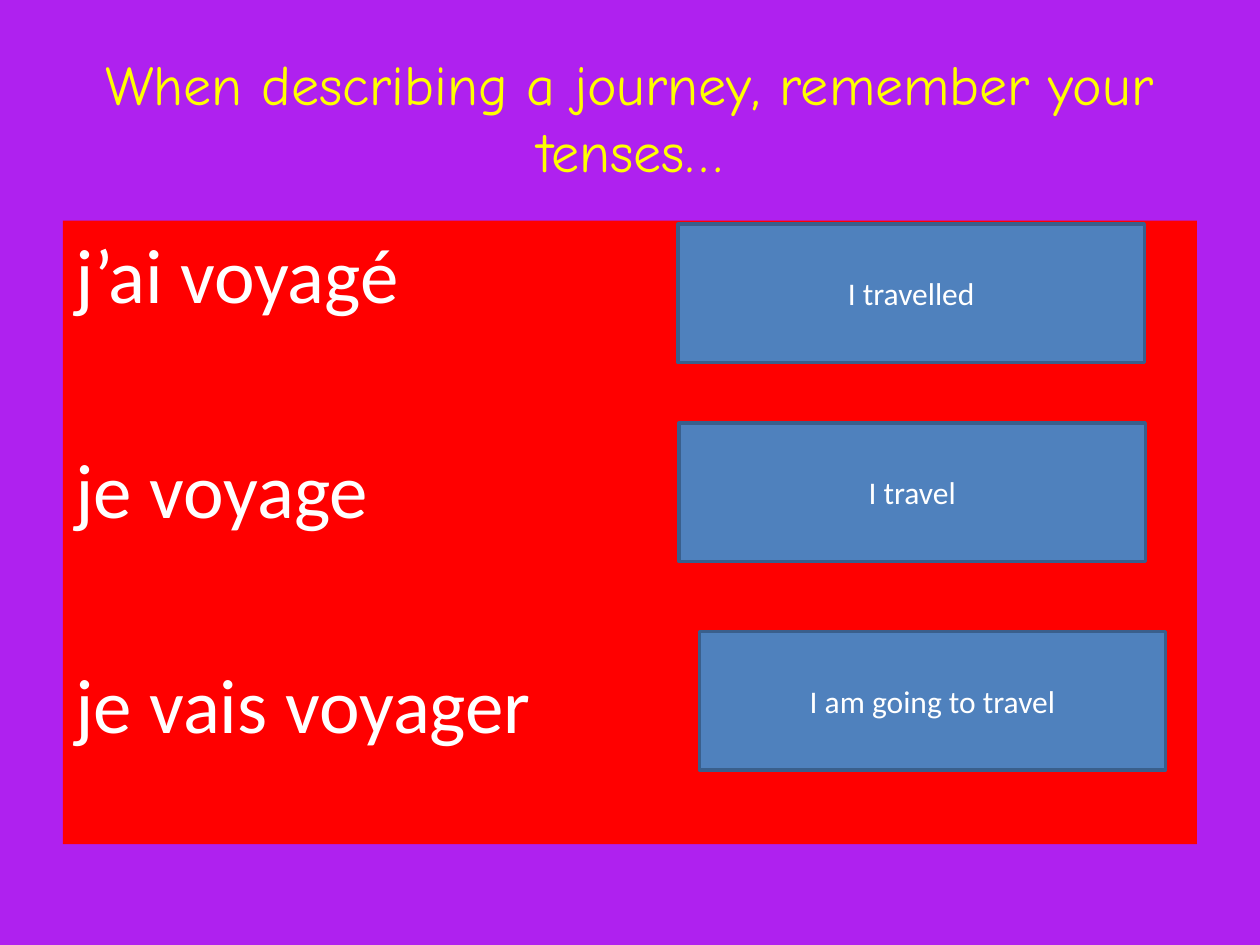
from pptx import Presentation
from pptx.dml.color import RGBColor
from pptx.enum import shapes, text
from pptx.util import Cm, Pt

PURPLE = RGBColor(0xAF, 0x21, 0xEF)
RED = RGBColor(0xFF, 0x00, 0x00)
YELLOW = RGBColor(0xFF, 0xFF, 0x00)
WHITE = RGBColor(0xFF, 0xFF, 0xFF)
BLUE = RGBColor(0x4F, 0x81, 0xBD)
DARK_BLUE = RGBColor(0x3A, 0x5F, 0x8C)

TITLE = "When describing a journey, remember your tenses…"
PHRASES = ["j’ai voyagé", "je voyage", "je vais voyager"]
# Translation, left and top in cm
ANSWERS = [
    ("I travelled", 13.67, 4.52),
    ("I travel", 13.69, 8.53),
    ("I am going to travel", 14.1, 12.73),
]


def write(sp, lines, font, size, color, align, anchor, gap=0):
    """Fill a shape with one paragraph per line, gap points apart."""
    tf = sp.text_frame
    tf.word_wrap = True
    tf.vertical_anchor = anchor
    tf.text = "\n".join(lines)
    for i, p in enumerate(tf.paragraphs):
        p.alignment = align
        p.space_before = Pt(gap if i else 0)
        for r in p.runs:
            r.font.name = font
            r.font.size = Pt(size)
            r.font.color.rgb = color


def add_title(slide):
    sp = slide.shapes.add_textbox(Cm(1.27), Cm(0.76), Cm(22.86), Cm(3.18))
    write(sp, [TITLE], "Comic Neue", 32, YELLOW,
          text.PP_ALIGN.CENTER, text.MSO_ANCHOR.MIDDLE)


def add_box(slide, left, top, width, height, fill):
    sp = slide.shapes.add_shape(shapes.MSO_SHAPE.RECTANGLE,
                                Cm(left), Cm(top), Cm(width), Cm(height))
    sp.shadow.inherit = False
    sp.fill.solid()
    sp.fill.fore_color.rgb = fill
    sp.line.fill.background()
    return sp


def add_phrases(slide):
    sp = add_box(slide, 1.27, 4.45, 22.86, 12.57, RED)
    write(sp, PHRASES, "Calibri", 44, WHITE,
          text.PP_ALIGN.LEFT, text.MSO_ANCHOR.TOP, gap=70)


def add_answer(slide, answer, left, top):
    sp = add_box(slide, left, top, 9.4, 2.79, BLUE)
    sp.line.color.rgb = DARK_BLUE
    sp.line.width = Pt(2)
    write(sp, [answer], "Calibri", 18, WHITE,
          text.PP_ALIGN.CENTER, text.MSO_ANCHOR.MIDDLE)


def main():
    prs = Presentation()
    prs.slide_width, prs.slide_height = Cm(25.4), Cm(19.05)
    slide = prs.slides.add_slide(prs.slide_layouts[6])
    slide.background.fill.solid()
    slide.background.fill.fore_color.rgb = PURPLE
    add_title(slide)
    add_phrases(slide)
    for answer, left, top in ANSWERS:
        add_answer(slide, answer, left, top)
    prs.save("out.pptx")


if __name__ == "__main__":
    main()
